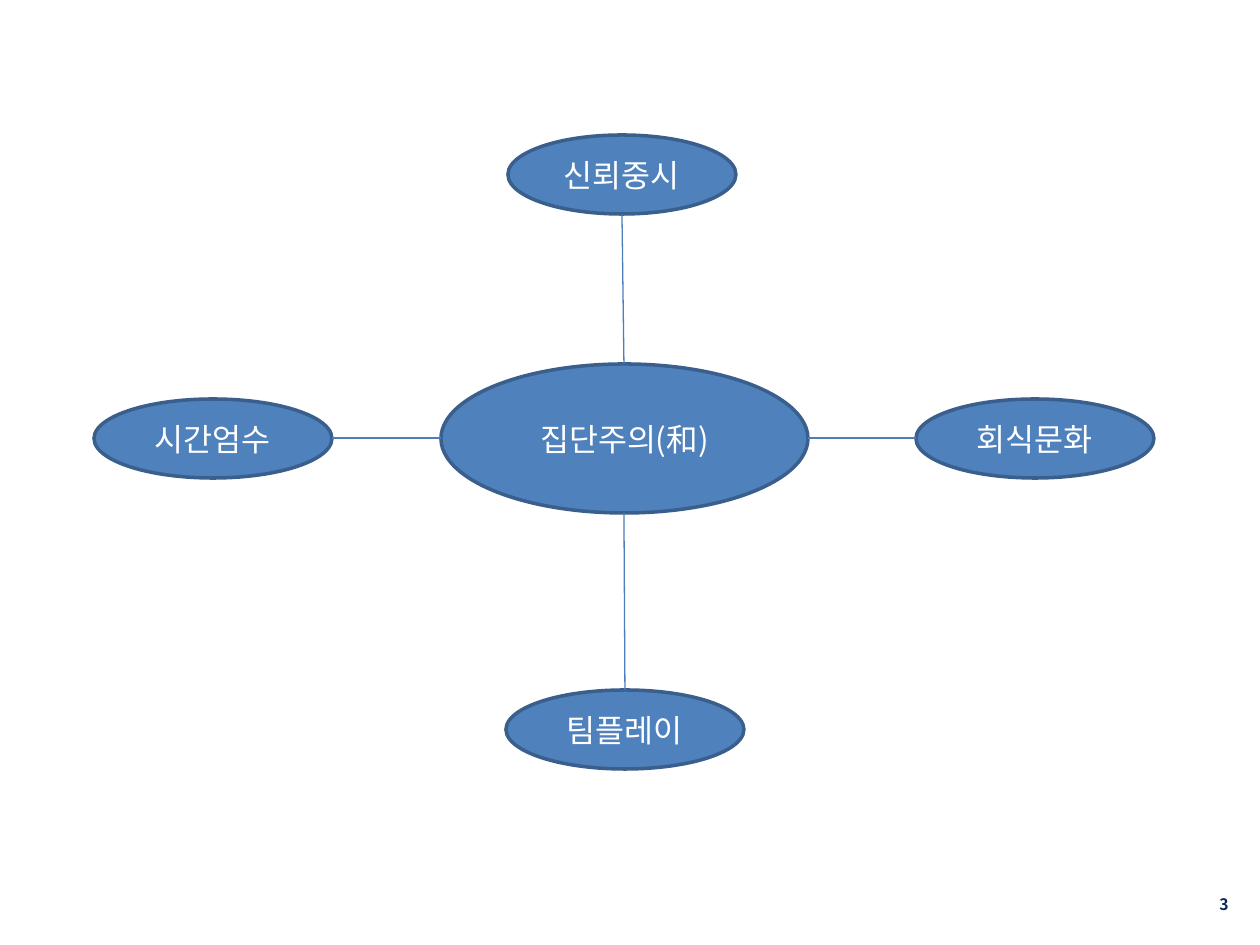
from pptx import Presentation
from pptx.dml.color import RGBColor
from pptx.enum.shapes import MSO_CONNECTOR, MSO_SHAPE
from pptx.enum.text import MSO_ANCHOR, PP_ALIGN
from pptx.oxml.ns import qn
from pptx.util import Pt
from lxml.etree import SubElement

PX = 914400 // 126
FONT = "Noto Sans CJK KR"
FILL, OUTLINE, LINK = "4F81BD", "3A5F8C", "4B7EBC"
WHITE, NAVY = "FFFFFF", "0C2759"

# text, (left, top, width, height) in px
HUB = ("집단주의(和)", (441, 364, 367, 149))
# side of the hub, text, (left, top, width, height) in px
TOPICS = [
    ("top", "신뢰중시", (508, 135, 228, 79)),
    ("left", "시간엄수", (94, 399, 238, 79)),
    ("bottom", "팀플레이", (506, 690, 238, 79)),
    ("right", "회식문화", (916, 399, 238, 79)),
]
PAGE_NUMBER = ("3", (948, 879, 293, 50))
OPPOSITE = {"top": "bottom", "bottom": "top", "left": "right", "right": "left"}


def color(value):
    return RGBColor.from_string(value)


def emu(lengths):
    return [length * PX for length in lengths]


def write(box, text, size, hex_color, align, bold=False):
    frame = box.text_frame
    frame.word_wrap = True
    frame.vertical_anchor = MSO_ANCHOR.MIDDLE
    frame.text = text
    para = frame.paragraphs[0]
    para.alignment = align
    font = para.runs[0].font
    font.name, font.size, font.bold = FONT, Pt(size), bold
    font.color.rgb = color(hex_color)
    SubElement(para.runs[0]._r.rPr, qn("a:ea"), typeface=FONT)


def add_ellipse(page, text, bounds):
    ellipse = page.shapes.add_shape(MSO_SHAPE.OVAL, *emu(bounds))
    ellipse.shadow.inherit = False
    ellipse.fill.solid()
    ellipse.fill.fore_color.rgb = color(FILL)
    ellipse.line.color.rgb = color(OUTLINE)
    ellipse.line.width = Pt(2)
    write(ellipse, text, 18, WHITE, PP_ALIGN.CENTER)


def side_point(bounds, side):
    """Midpoint of one side of a box."""
    left, top, width, height = bounds
    return {
        "top": (left + width // 2, top),
        "bottom": (left + width // 2, top + height),
        "left": (left, top + height // 2),
        "right": (left + width, top + height // 2),
    }[side]


def add_link(page, start, end):
    link = page.shapes.add_connector(MSO_CONNECTOR.STRAIGHT, *emu(start + end))
    link.line.color.rgb = color(LINK)
    link.line.width = Pt(0.75)
    SubElement(link._element.spPr, qn("a:effectLst"))


def main():
    deck = Presentation()
    deck.slide_width, deck.slide_height = emu((1260, 945))
    page = deck.slides.add_slide(deck.slide_layouts[6])

    number, bounds = PAGE_NUMBER
    number_box = page.shapes.add_textbox(*emu(bounds))
    write(number_box, number, 9, NAVY, PP_ALIGN.RIGHT, bold=True)

    add_ellipse(page, *HUB)
    for side, text, bounds in TOPICS:
        add_ellipse(page, text, bounds)
        add_link(page, side_point(HUB[1], side), side_point(bounds, OPPOSITE[side]))

    deck.save("out.pptx")


if __name__ == "__main__":
    main()
